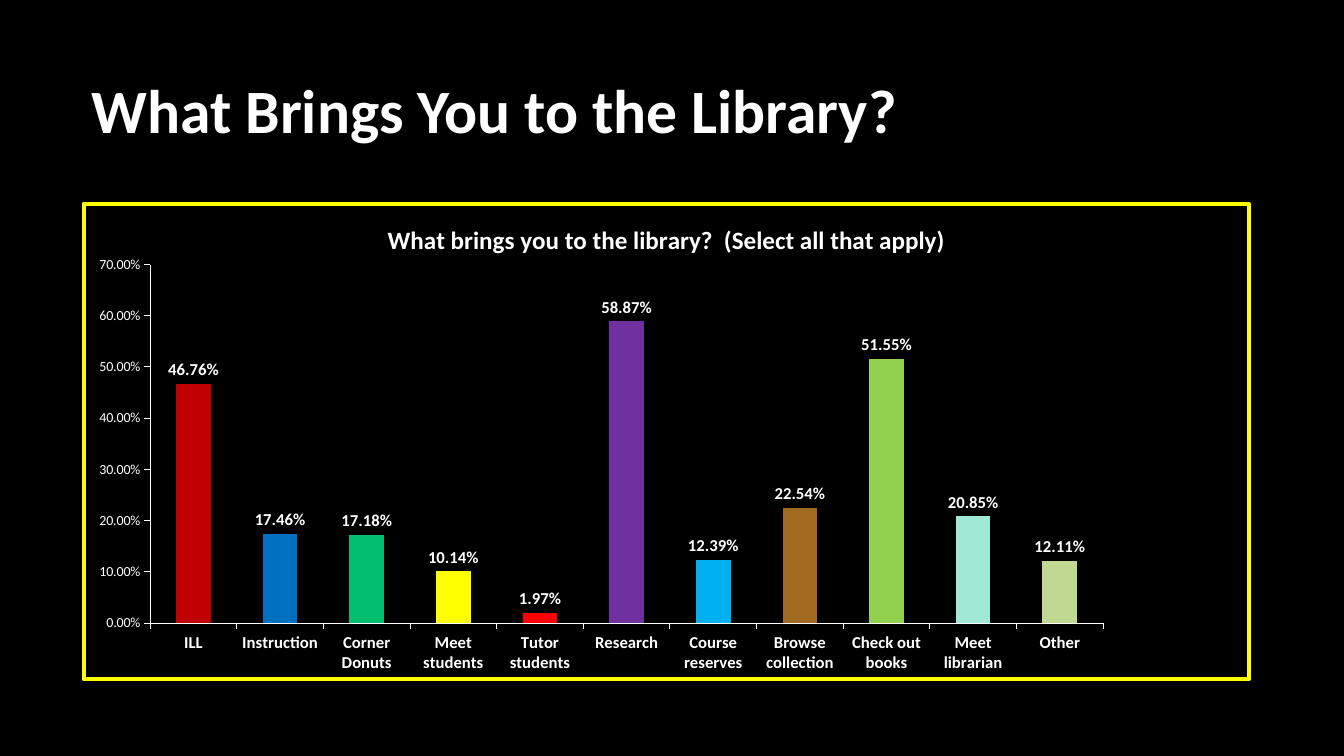
from collections import namedtuple
from dataclasses import dataclass

from lxml.etree import SubElement
from pptx import Presentation
from pptx.chart.data import CategoryChartData
from pptx.dml.color import RGBColor
from pptx.enum.chart import XL_CHART_TYPE, XL_LABEL_POSITION, XL_TICK_MARK
from pptx.enum.text import MSO_ANCHOR, MSO_AUTO_SIZE, PP_ALIGN
from pptx.oxml import parse_xml
from pptx.oxml.ns import nsdecls, qn
from pptx.util import Pt

Box = namedtuple("Box", "left top width height")


@dataclass(frozen=True)
class Theme:
    font: str = "Calibri"
    background: str = "000000"
    text: str = "FFFFFF"
    frame: str = "FFFF00"
    title_size: int = 44
    chart_title_size: int = 18
    label_size: int = 12
    axis_size: int = 10
    frame_width: int = 3


THEME = Theme()
PERCENT = "0.00%"

# Reason, share of answers, bar colour
REASONS = [
    ("ILL", 0.4676, "C00000"),
    ("Instruction", 0.1746, "0070C0"),
    ("Corner Donuts", 0.1718, "00BF6F"),
    ("Meet students", 0.1014, "FFFF00"),
    ("Tutor students", 0.0197, "FF0000"),
    ("Research", 0.5887, "7030A0"),
    ("Course reserves", 0.1239, "00B0F0"),
    ("Browse collection", 0.2254, "A26921"),
    ("Check out books", 0.5155, "92D050"),
    ("Meet librarian", 0.2085, "A0E9D6"),
    ("Other", 0.1211, "C1D892"),
]


def color(value):
    return RGBColor.from_string(value)


def style_font(font, size, bold):
    font.name = THEME.font
    font.size = Pt(size)
    font.bold = bold
    font.color.rgb = color(THEME.text)


def add_title(page, box, text):
    title = page.shapes.title
    title.left, title.top, title.width, title.height = map(Pt, box)
    frame = title.text_frame
    frame.word_wrap = True
    frame.auto_size = MSO_AUTO_SIZE.NONE
    frame.vertical_anchor = MSO_ANCHOR.MIDDLE
    para = frame.paragraphs[0]
    para.alignment = PP_ALIGN.LEFT
    para.line_spacing = 0.9
    span = para.add_run()
    span.text = text
    style_font(span.font, THEME.title_size, True)


def frame_chart(chart):
    """Draw the coloured border around the whole chart."""
    border = parse_xml(
        f'<c:spPr {nsdecls("c", "a")}><a:noFill/>'
        f'<a:ln w="{Pt(THEME.frame_width)}"><a:solidFill>'
        f'<a:srgbClr val="{THEME.frame}"/></a:solidFill><a:round/></a:ln></c:spPr>'
    )
    chart.element.find(qn("c:chart")).addnext(border)


def place_plot(chart, x, y, width, height):
    """Fix the inner plot area, in fractions of the chart."""
    area = chart.element.find(".//" + qn("c:plotArea"))
    for layout in area.findall(qn("c:layout")):
        area.remove(layout)
    layout = parse_xml(f'<c:layout {nsdecls("c")}><c:manualLayout/></c:layout>')
    settings = [
        ("layoutTarget", "inner"), ("xMode", "edge"), ("yMode", "edge"),
        ("x", x), ("y", y), ("w", width), ("h", height),
    ]
    for name, value in settings:
        SubElement(layout[0], qn(f"c:{name}")).set("val", str(value))
    area.insert(0, layout)


def style_axis(axis, size, bold):
    axis.has_major_gridlines = False
    axis.major_tick_mark = XL_TICK_MARK.OUTSIDE
    axis.minor_tick_mark = XL_TICK_MARK.NONE
    axis.format.line.color.rgb = color(THEME.text)
    axis.format.line.width = Pt(0.75)
    style_font(axis.tick_labels.font, size, bold)


def add_reason_chart(page, box, heading):
    data = CategoryChartData(number_format=PERCENT)
    data.categories = [name for name, _, _ in REASONS]
    data.add_series("Series 1", [share for _, share, _ in REASONS])
    chart = page.shapes.add_chart(
        XL_CHART_TYPE.COLUMN_CLUSTERED, *map(Pt, box), data
    ).chart
    style_font(chart.font, THEME.axis_size, False)
    chart.has_legend = False
    frame_chart(chart)
    place_plot(chart, 0.057, 0.128, 0.818, 0.754)

    # Heading
    chart.has_title = True
    span = chart.chart_title.text_frame.paragraphs[0].add_run()
    span.text = heading
    style_font(span.font, THEME.chart_title_size, True)

    # Axes
    style_axis(chart.category_axis, THEME.label_size, True)
    scale = chart.value_axis
    style_axis(scale, THEME.axis_size, False)
    scale.minimum_scale, scale.maximum_scale, scale.major_unit = 0, 0.7, 0.1
    scale.tick_labels.number_format = PERCENT
    scale.tick_labels.number_format_is_linked = False

    # Bars and their values
    plot = chart.plots[0]
    plot.gap_width = 150
    plot.vary_by_categories = False
    series = plot.series[0]
    series.invert_if_negative = False
    for index, (_, _, bar_color) in enumerate(REASONS):
        fill = series.points[index].format.fill
        fill.solid()
        fill.fore_color.rgb = color(bar_color)
    labels = series.data_labels
    labels.show_value = True
    labels.position = XL_LABEL_POSITION.OUTSIDE_END
    labels.number_format = PERCENT
    labels.number_format_is_linked = False
    style_font(labels.font, THEME.label_size, True)


def build_survey_page(deck):
    page = deck.slides.add_slide(deck.slide_layouts[5])
    page.background.fill.solid()
    page.background.fill.fore_color.rgb = color(THEME.background)
    add_title(page, Box(58.3, 28.8, 856, 104.4), "What Brings You to the Library?")
    add_reason_chart(
        page,
        Box(58.3, 144, 835.2, 342.7),
        "What brings you to the library?  (Select all that apply)",
    )


def main():
    deck = Presentation()
    deck.slide_width, deck.slide_height = Pt(960), Pt(540)
    build_survey_page(deck)
    deck.save("out.pptx")


if __name__ == "__main__":
    main()
